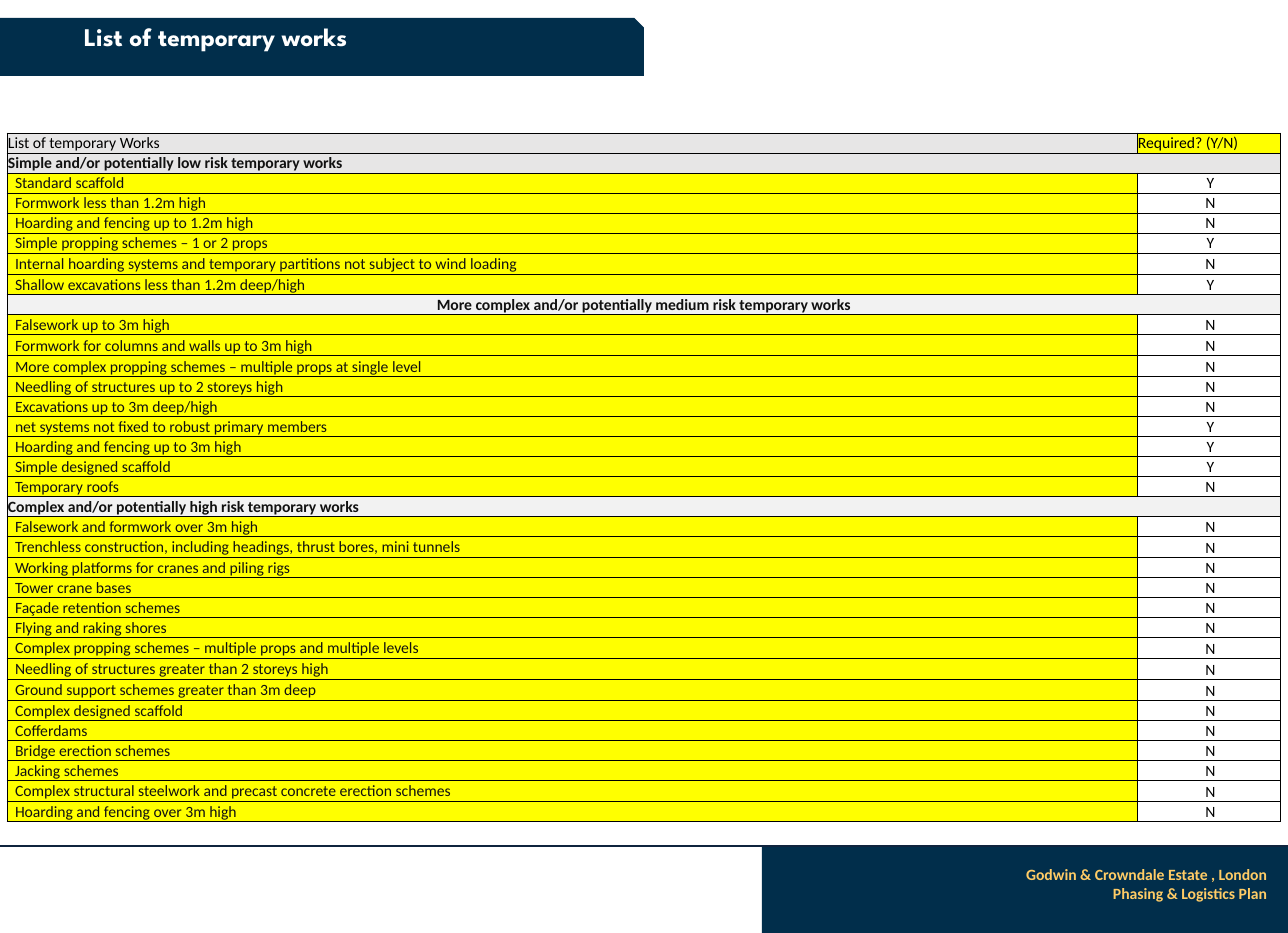
"""Builds the slide listing the temporary works and whether each is required."""
import pptx
import pptx.util
from lxml import etree
from pptx.dml.color import RGBColor
from pptx.enum.shapes import MSO_CONNECTOR, MSO_SHAPE
from pptx.enum.text import MSO_ANCHOR, PP_ALIGN
from pptx.oxml.ns import qn

NAVY = RGBColor(0x01, 0x2E, 0x4B)
RULE = RGBColor(0x0F, 0x24, 0x3E)
GOLD = RGBColor(0xFF, 0xCC, 0x66)
YELLOW = RGBColor(0xFF, 0xFF, 0x00)
GREY = RGBColor(0xE7, 0xE6, 0xE6)
PALE = RGBColor(0xF2, 0xF2, 0xF2)
WHITE = RGBColor(0xFF, 0xFF, 0xFF)
BLACK = RGBColor(0x00, 0x00, 0x00)
INK = RGBColor(0x11, 0x11, 0x11)

PX = 914400 / 112.8
ROW, TALL_ROW = 20, 21
TALL_ROWS = {6, 7, 10, 11, 20, 25, 26, 27, 32}

SECTIONS = [
    ("Simple and/or potentially low risk temporary works", GREY, PP_ALIGN.LEFT, [
        ("Standard scaffold", "Y"),
        ("Formwork less than 1.2m high", "N"),
        ("Hoarding and fencing up to 1.2m high", "N"),
        ("Simple propping schemes – 1 or 2 props", "Y"),
        ("Internal hoarding systems and temporary partitions not subject to wind loading", "N"),
        ("Shallow excavations less than 1.2m deep/high", "Y"),
    ]),
    ("More complex and/or potentially medium risk temporary works", PALE, PP_ALIGN.CENTER, [
        ("Falsework up to 3m high", "N"),
        ("Formwork for columns and walls up to 3m high", "N"),
        ("More complex propping schemes – multiple props at single level", "N"),
        ("Needling of structures up to 2 storeys high", "N"),
        ("Excavations up to 3m deep/high", "N"),
        ("net systems not fixed to robust primary members", "Y"),
        ("Hoarding and fencing up to 3m high", "Y"),
        ("Simple designed scaffold", "Y"),
        ("Temporary roofs", "N"),
    ]),
    ("Complex and/or potentially high risk temporary works", PALE, PP_ALIGN.LEFT, [
        ("Falsework and formwork over 3m high", "N"),
        ("Trenchless construction, including headings, thrust bores, mini tunnels", "N"),
        ("Working platforms for cranes and piling rigs", "N"),
        ("Tower crane bases", "N"),
        ("Façade retention schemes", "N"),
        ("Flying and raking shores", "N"),
        ("Complex propping schemes – multiple props and multiple levels", "N"),
        ("Needling of structures greater than 2 storeys high", "N"),
        ("Ground support schemes greater than 3m deep", "N"),
        ("Complex designed scaffold", "N"),
        ("Cofferdams", "N"),
        ("Bridge erection schemes", "N"),
        ("Jacking schemes", "N"),
        ("Complex structural steelwork and precast concrete erection schemes", "N"),
        ("Hoarding and fencing over 3m high", "N"),
    ]),
]


def px(length):
    """Turn whole pixels into EMU."""
    return pptx.util.Emu(round(length * PX))


def write(frame, text, font, size, color, bold, align):
    """Put text in a frame and format all of its runs."""
    frame.text = text
    for para in frame.paragraphs:
        para.alignment = align
        for span in para.runs:
            span.font.name = font
            span.font.size = pptx.util.Pt(size)
            span.font.bold = bold
            span.font.color.rgb = color


deck = pptx.Presentation()
deck.slide_width, deck.slide_height = px(1288), px(933)
page = deck.slides.add_slide(deck.slide_layouts[6])

for preset, left, top, width, height in [
    (MSO_SHAPE.RECTANGLE, 762, 846, 526, 87),
    (MSO_SHAPE.SNIP_1_RECTANGLE, 0, 18, 644, 58),
]:
    band = page.shapes.add_shape(preset, px(left), px(top), px(width), px(height))
    band.shadow.inherit = False
    band.fill.solid()
    band.fill.fore_color.rgb = NAVY
    band.line.fill.background()

rule = page.shapes.add_connector(MSO_CONNECTOR.STRAIGHT, 0, px(846), px(1288), px(846))
rule.line.color.rgb = RULE
rule.line.width = pptx.util.Pt(0.75)
etree.SubElement(rule._element.spPr, qn("a:effectLst"))

for text, left, top, width, height, font, size, color, align, anchor in [
    ("Godwin & Crowndale Estate , London\nPhasing & Logistics Plan", 769, 859, 509, 50,
     "Calibri", 10, GOLD, PP_ALIGN.RIGHT, MSO_ANCHOR.TOP),
    ("List of temporary works", 32, 20, 367, 33,
     "League Spartan", 16.2, WHITE, PP_ALIGN.CENTER, MSO_ANCHOR.MIDDLE),
]:
    box = page.shapes.add_textbox(px(left), px(top), px(width), px(height))
    box.text_frame.word_wrap = True
    box.text_frame.vertical_anchor = anchor
    write(box.text_frame, text, font, size, color, True, align)

rows = [[("List of temporary Works", GREY, BLACK, False, PP_ALIGN.LEFT, 1, MSO_ANCHOR.BOTTOM),
         ("Required? (Y/N)", YELLOW, BLACK, False, PP_ALIGN.LEFT, 1, MSO_ANCHOR.BOTTOM)]]
for heading, shade, heading_align, works in SECTIONS:
    rows.append([(heading, shade, INK, True, heading_align, 1, MSO_ANCHOR.MIDDLE)])
    for work, required in works:
        rows.append([(work, YELLOW, INK, False, PP_ALIGN.LEFT, 8, MSO_ANCHOR.MIDDLE),
                     (required, WHITE, BLACK, False, PP_ALIGN.CENTER, 5, MSO_ANCHOR.BOTTOM)])

heights = [TALL_ROW if index in TALL_ROWS else ROW for index in range(len(rows))]
table = page.shapes.add_table(len(rows), 2, px(7), px(133), px(1273), px(sum(heights))).table
table.first_row = table.horz_banding = False
table.columns[0].width, table.columns[1].width = px(1130), px(143)

for index, (entries, height) in enumerate(zip(rows, heights)):
    table.rows[index].height = px(height)
    if len(entries) == 1:
        table.cell(index, 0).merge(table.cell(index, 1))
    for column, (text, shade, color, bold, align, inset, anchor) in enumerate(entries):
        cell = table.cell(index, column)
        cell.margin_left, cell.margin_right = px(inset), px(1)
        cell.margin_top, cell.margin_bottom = px(1), 0
        cell.vertical_anchor = anchor
        write(cell.text_frame, text, "Calibri", 10, color, bold, align)
    for column in range(2):
        cell = table.cell(index, column)
        properties = cell._tc.get_or_add_tcPr()
        for side in ("a:lnL", "a:lnR", "a:lnT", "a:lnB"):
            border = etree.SubElement(properties, qn(side), w=str(pptx.util.Pt(0.5)))
            fill = etree.SubElement(border, qn("a:solidFill"))
            etree.SubElement(fill, qn("a:srgbClr"), val=str(BLACK))
        cell.fill.solid()
        cell.fill.fore_color.rgb = entries[min(column, len(entries) - 1)][1]

deck.save("out.pptx")
